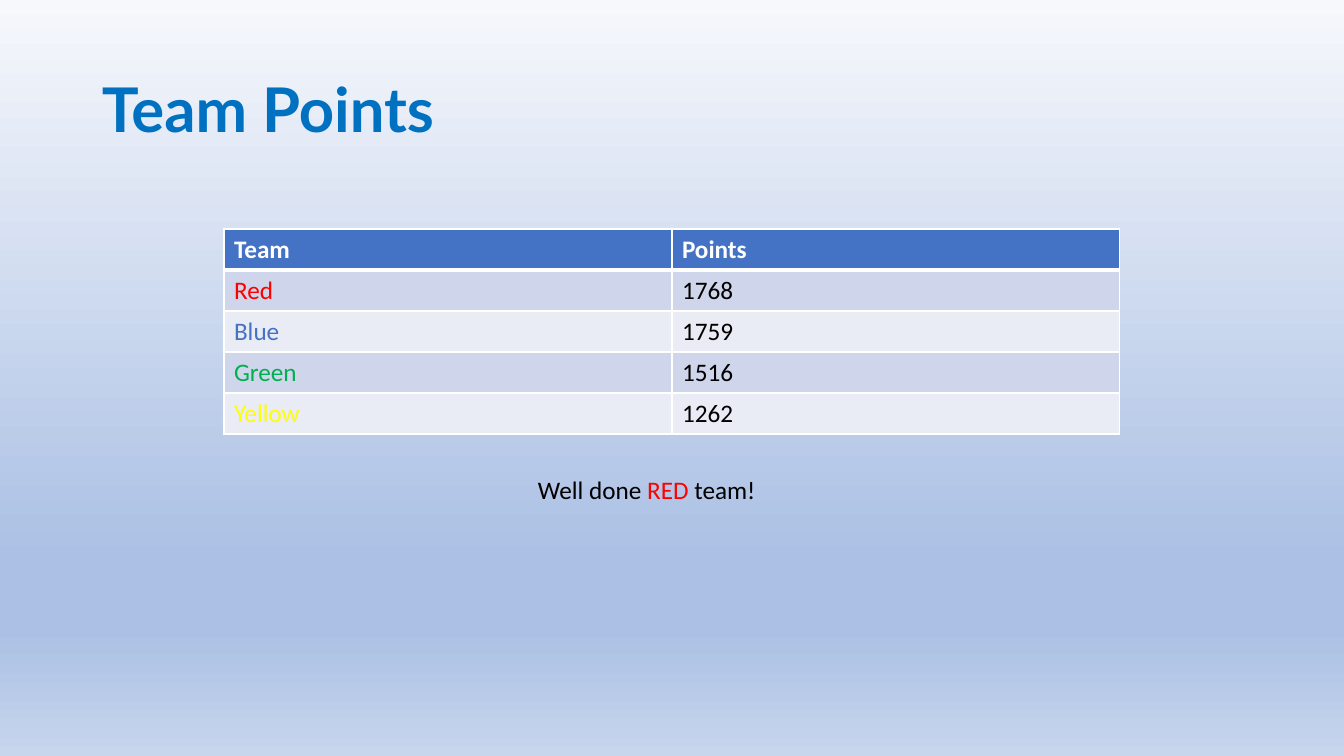
from dataclasses import dataclass

from lxml import etree
from pptx import Presentation
from pptx import util as u
from pptx.dml.color import RGBColor
from pptx.enum import text
from pptx.oxml import ns

SCALE = 12192000 / 1344


@dataclass(frozen=True)
class Theme:
    title_font: str = "Lato"
    body_font: str = "Calibri"
    title_size: int = 44
    body_size: int = 18
    title: str = "0070C0"
    header: str = "4472C4"
    bands: tuple = ("CFD5EA", "E9EBF5")
    white: str = "FFFFFF"
    black: str = "000000"
    red: str = "FF0000"
    blue: str = "4472C4"
    green: str = "00B050"
    yellow: str = "FFFF00"
    backdrop: tuple = ((0, "F6F8FC"), (74, "ABC0E4"), (83, "ABC0E4"), (100, "C7D5ED"))


T = Theme()


def px(n):
    return u.Emu(round(n * SCALE))


def add_color(parent, color):
    etree.SubElement(parent, ns.qn("a:srgbClr"), val=color)


def set_background(s, stops):
    fill = s.background.fill
    fill.gradient()
    fill.gradient_angle = 270
    gs_lst = s.background._cSld.find(".//" + ns.qn("a:gsLst"))
    for gs in list(gs_lst):
        gs_lst.remove(gs)
    for pos, color in stops:
        add_color(etree.SubElement(gs_lst, ns.qn("a:gs"), pos=str(pos * 1000)), color)


def add_run(p, words, color=T.black, size=T.body_size, font=T.body_font, bold=False):
    r = p.add_run()
    r.text = words
    r.font.name = font
    r.font.size = u.Pt(size)
    r.font.bold = bold
    r.font.color.rgb = RGBColor.from_string(color)


def add_text(s, box, runs, anchor=text.MSO_ANCHOR.TOP, line_spacing=None, **style):
    tf = s.shapes.add_textbox(*map(px, box)).text_frame
    tf.word_wrap = True
    tf.vertical_anchor = anchor
    p = tf.paragraphs[0]
    p.line_spacing = line_spacing
    for words, color in runs:
        add_run(p, words, color, **style)


def set_border(cell, side, width):
    ln = etree.SubElement(cell._tc.get_or_add_tcPr(), ns.qn("a:ln" + side), w=str(u.Pt(width)))
    add_color(etree.SubElement(ln, ns.qn("a:solidFill")), T.white)


def format_cell(cell, words, color, fill, bold, top, bottom):
    for side, width in (("L", 1), ("R", 1), ("T", top), ("B", bottom)):
        set_border(cell, side, width)
    cell.fill.solid()
    cell.fill.fore_color.rgb = RGBColor.from_string(fill)
    add_run(cell.text_frame.paragraphs[0], words, color, bold=bold)


def add_points_table(s, left, top, col_width, row_height, header, teams):
    rows = [[(h, T.white) for h in header]]
    rows += [[(team, color), (points, T.black)] for team, points, color in teams]
    n, m = len(rows), len(header)
    size = (left, top, col_width * m, row_height * n)
    tbl = s.shapes.add_table(n, m, *map(px, size)).table
    for i, row in enumerate(rows):
        fill = T.bands[(i - 1) % 2] if i else T.header
        for j, (words, color) in enumerate(row):
            format_cell(tbl.cell(i, j), words, color, fill, bold=i == 0,
                        top=3 if i == 1 else 1, bottom=3 if i == 0 else 1)


def main():
    prs = Presentation()
    prs.slide_width, prs.slide_height = px(1344), px(756)
    s = prs.slides.add_slide(prs.slide_layouts[6])
    set_background(s, T.backdrop)
    add_text(s, (92, 40, 1159, 146), [("Team Points", T.title)],
             anchor=text.MSO_ANCHOR.MIDDLE, line_spacing=0.9,
             size=T.title_size, font=T.title_font, bold=True)
    add_points_table(s, 224, 229, 448, 41, ("Team", "Points"), (
        ("Red", "1768", T.red),
        ("Blue", "1759", T.blue),
        ("Green", "1516", T.green),
        ("Yellow", "1262", T.yellow),
    ))
    add_text(s, (528, 469, 287, 41),
             [("Well done ", T.black), ("RED", T.red), (" team!", T.black)])
    prs.save("out.pptx")


if __name__ == "__main__":
    main()
